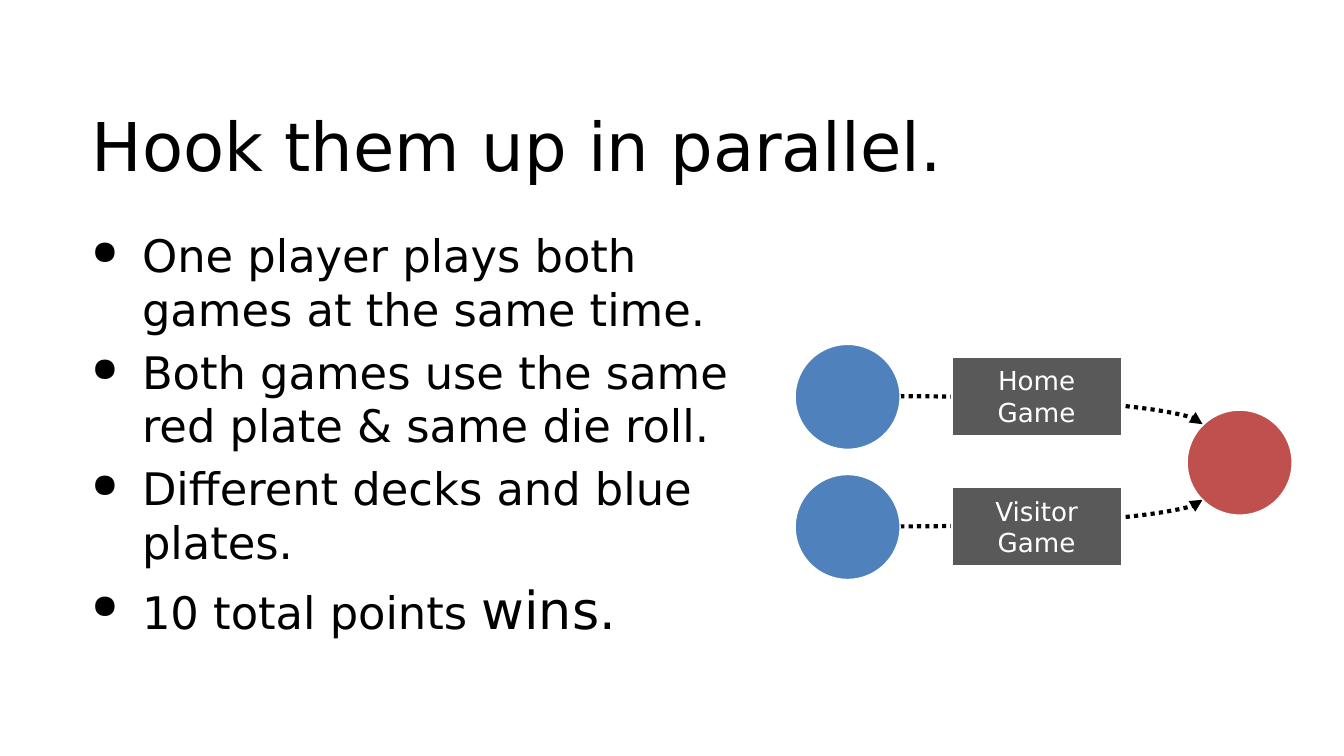
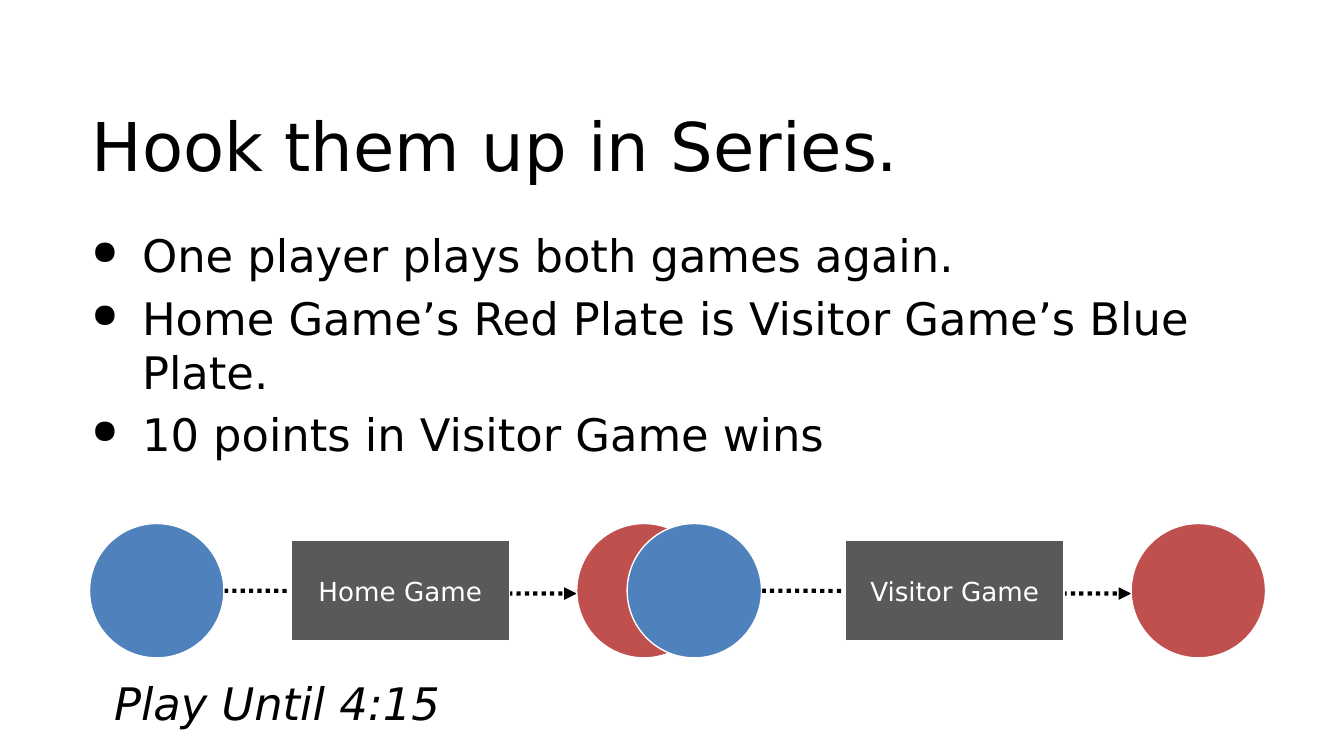
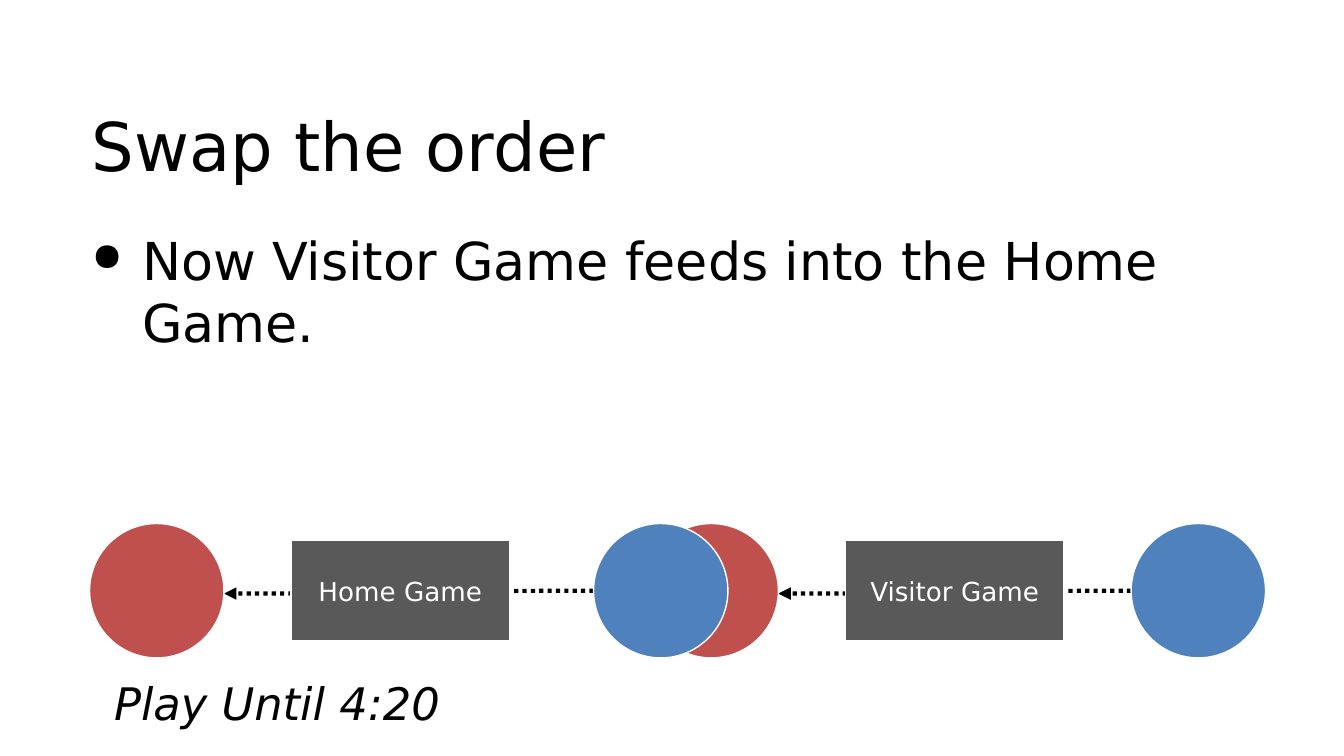
from dataclasses import dataclass

from pptx import Presentation
from pptx.dml.color import RGBColor
from pptx.enum.dml import MSO_LINE
from pptx.enum.shapes import MSO_CONNECTOR, MSO_SHAPE
from pptx.enum.text import MSO_ANCHOR, MSO_AUTO_SIZE, PP_ALIGN
from pptx.oxml.ns import qn
from pptx.oxml.xmlchemy import OxmlElement
from pptx.util import Emu, Pt

CURVE = MSO_CONNECTOR.CURVE
OVAL, RECT = MSO_SHAPE.OVAL, MSO_SHAPE.RECTANGLE
DOTTED = MSO_LINE.ROUND_DOT
TOP, MIDDLE = MSO_ANCHOR.TOP, MSO_ANCHOR.MIDDLE
LEFT, CENTER = PP_ALIGN.LEFT, PP_ALIGN.CENTER
NO_FIT = MSO_AUTO_SIZE.NONE
FIT_SHAPE = MSO_AUTO_SIZE.SHAPE_TO_FIT_TEXT
TITLE_ONLY = 5


@dataclass(frozen=True)
class Theme:
    font: str = "DejaVu Sans"
    ink: str = "000000"
    paper: str = "FFFFFF"
    blue: str = "4F81BD"
    red: str = "C0504D"
    gray: str = "595959"
    title: int = 36
    large: int = 28
    body: int = 24
    label: int = 14
    outline: float = 0.75
    arrow: float = 2.25


THEME = Theme()
TITLE_BOX = (56, 70, 848, 82)
PARALLEL_BOX = (568, 246, 355, 168)
SERIES_BOX = (64, 374, 840, 96)
NOTE_BOX = (72, 478, 269, 48)


def px(n):
    return Emu(n * 9525)


def rgb(color):
    return RGBColor.from_string(color)


def add_run(p, text, size=THEME.body, color=THEME.ink, italic=None):
    r = p.add_run()
    r.text = text
    r.font.name = THEME.font
    r.font.size = Pt(size)
    r.font.color.rgb = rgb(color)
    r.font.italic = italic


def write(tf, paragraphs, align=LEFT, anchor=TOP, fit=NO_FIT, wrap=True,
          bullets=False, gap=0, **style):
    tf.word_wrap = wrap
    tf.auto_size = fit
    tf.vertical_anchor = anchor
    for i, runs in enumerate(paragraphs):
        p = tf.paragraphs[0] if i == 0 else tf.add_paragraph()
        if bullets:
            add_bullet(p)
        p.alignment = align
        if i and gap:
            p.space_before = Pt(gap)
        for run in [runs] if isinstance(runs, str) else runs:
            text, size = (run, None) if isinstance(run, str) else run
            add_run(p, text, **(style | ({"size": size} if size else {})))


def add_bullet(p):
    pPr = p._p.get_or_add_pPr()
    pPr.set("marL", str(px(36)))
    pPr.set("indent", str(-px(36)))
    color = OxmlElement("a:buClr")
    value = OxmlElement("a:srgbClr")
    value.set("val", THEME.ink)
    color.append(value)
    size = OxmlElement("a:buSzPct")
    size.set("val", "75000")
    char = OxmlElement("a:buChar")
    char.set("char", "●")
    pPr.extend([color, size, char])


def add_node(shapes, kind, x, y, w, h, fill, lines=()):
    sp = shapes.add_shape(kind, px(x), px(y), px(w), px(h))
    sp.shadow.inherit = False
    sp.fill.solid()
    sp.fill.fore_color.rgb = rgb(fill)
    sp.line.color.rgb = rgb(THEME.paper)
    sp.line.width = Pt(THEME.outline)
    if lines:
        write(sp.text_frame, lines, align=CENTER, anchor=MIDDLE,
              size=THEME.label, color=THEME.paper)


def add_arrow(shapes, x1, y1, x2, y2, preset="curvedConnector3"):
    cxn = shapes.add_connector(CURVE, px(x1), px(y1), px(x2), px(y2))
    cxn.line.color.rgb = rgb(THEME.ink)
    cxn.line.width = Pt(THEME.arrow)
    cxn.line.dash_style = DOTTED
    spPr = cxn._element.spPr
    spPr.find(qn("a:prstGeom")).set("prst", preset)
    tail = OxmlElement("a:tailEnd")
    tail.set("type", "triangle")
    spPr.find(qn("a:ln")).append(tail)
    spPr.append(OxmlElement("a:effectLst"))


def add_title_slide(prs, title):
    s = prs.slides.add_slide(prs.slide_layouts[TITLE_ONLY])
    sp = s.shapes.title
    sp.left, sp.top, sp.width, sp.height = map(px, TITLE_BOX)
    write(sp.text_frame, [title], size=THEME.title)
    return s


def add_body(s, paragraphs, w, h, size=THEME.body):
    sp = s.shapes.add_textbox(px(56), px(158), px(w), px(h))
    write(sp.text_frame, paragraphs, bullets=True, gap=size * 0.2, size=size)


def add_note(s, text):
    sp = s.shapes.add_textbox(*map(px, NOTE_BOX))
    write(sp.text_frame, [text], fit=FIT_SHAPE, wrap=False, italic=True)


def add_parallel(s, box, labels):
    x, y, w, h = box
    plate, pitch = 75, 93
    shapes = s.shapes.add_group_shape().shapes
    for row, end in enumerate((57, h - 57)):
        add_arrow(shapes, x + plate, y + 37 + row * pitch, x + 291, y + end,
                  preset="curvedConnector2")
    add_node(shapes, OVAL, x + w - plate, y + 47, plate, plate, THEME.red)
    for row, lines in enumerate(labels):
        top = y + row * pitch
        add_node(shapes, OVAL, x, top, plate, plate, THEME.blue)
        add_node(shapes, RECT, x + 112, top + 9, 121, 56, THEME.gray, lines)


def add_series(s, box, labels, mirrored=False):
    x, y, w, plate = box
    stages = ((0, 144, 348), (384, 540, 744))
    shapes = s.shapes.add_group_shape().shapes

    def place(offset, width=0):
        return x + (w - offset - width if mirrored else offset)

    for start, _, end in stages:
        add_arrow(shapes, place(start + plate), y + 48, place(end), y + 50)
    for (_, game, _), label in zip(stages, labels):
        add_node(shapes, RECT, place(game, 156), y + 12, 156, 72,
                 THEME.gray, [label])
    for _, _, end in stages:
        add_node(shapes, OVAL, place(end, plate), y, plate, plate, THEME.red)
    for start, _, _ in stages:
        add_node(shapes, OVAL, place(start, plate), y, plate, plate, THEME.blue)


def parallel_slide(prs):
    s = add_title_slide(prs, "Hook them up in parallel.")
    add_body(s, [
        "One player plays both games at the same time.",
        "Both games use the same red plate & same die roll.",
        "Different decks and blue plates.",
        ["10 total points ", ("wins.", THEME.large)],
    ], 480, 288)
    add_parallel(s, PARALLEL_BOX, [["Home Game"], ["Visitor", "Game"]])


def series_slide(prs):
    s = add_title_slide(prs, "Hook them up in Series.")
    add_body(s, [
        "One player plays both games again.",
        "Home Game’s Red Plate is Visitor Game’s Blue Plate.",
        "10 points in Visitor Game wins",
    ], 832, 208)
    add_series(s, SERIES_BOX, ["Home Game", "Visitor Game"])
    add_note(s, "Play Until 4:15")


def swap_slide(prs):
    s = add_title_slide(prs, "Swap the order")
    add_body(s, ["Now Visitor Game feeds into the Home Game."], 840, 288,
             size=THEME.large)
    add_series(s, SERIES_BOX, ["Visitor Game", "Home Game"], mirrored=True)
    add_note(s, "Play Until 4:20")


def main():
    prs = Presentation()
    prs.slide_width, prs.slide_height = px(960), px(540)
    parallel_slide(prs)
    series_slide(prs)
    swap_slide(prs)
    prs.save("out.pptx")


if __name__ == "__main__":
    main()
